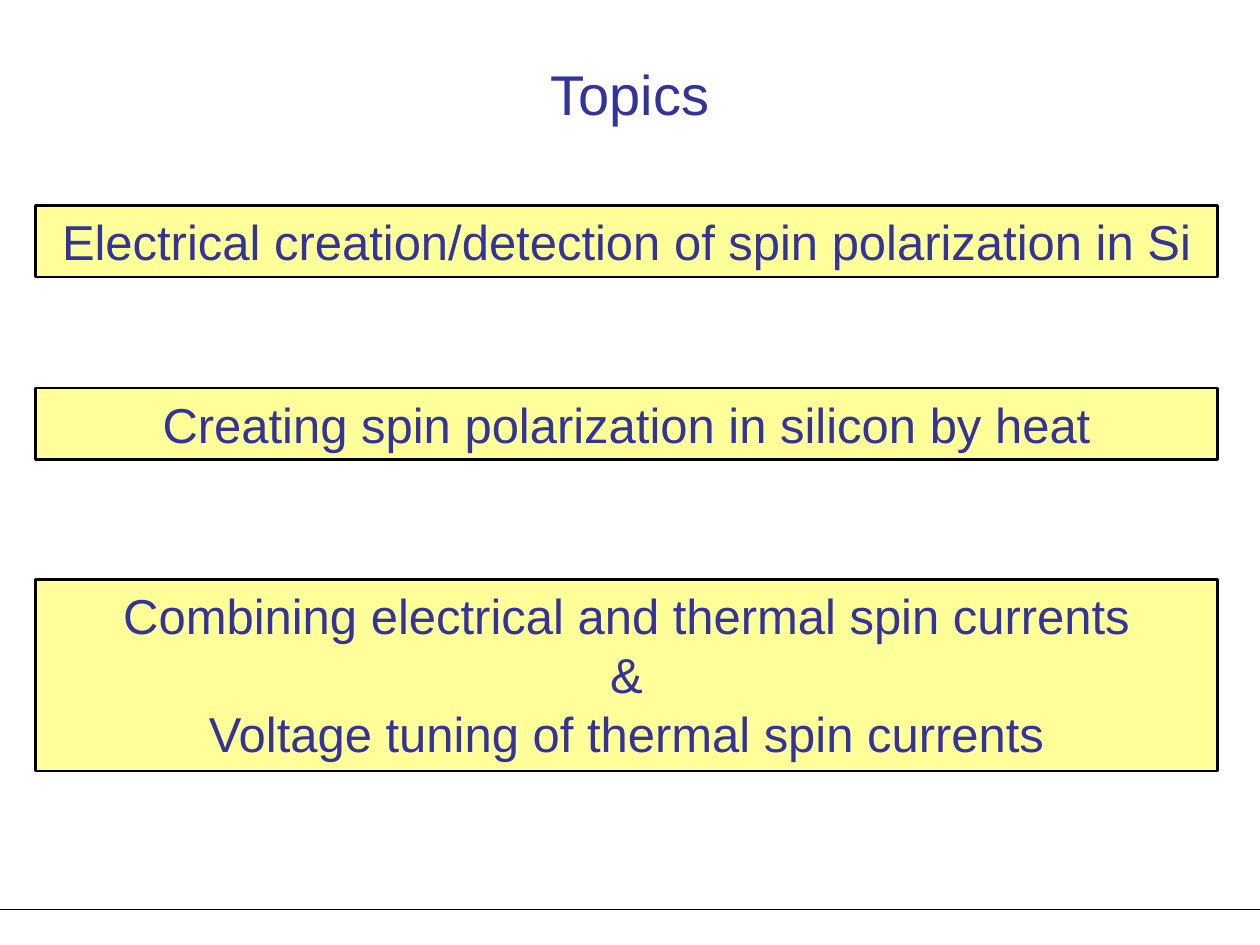
from dataclasses import dataclass

from lxml import etree
from pptx import Presentation
from pptx.dml.color import RGBColor
from pptx.enum import shapes, text
from pptx.oxml.ns import qn
from pptx.util import Pt


@dataclass(frozen=True)
class Theme:
    font: str = "Arial"
    ink: RGBColor = RGBColor(0x33, 0x33, 0x99)
    panel: RGBColor = RGBColor(0xFF, 0xFF, 0x99)
    line: RGBColor = RGBColor(0, 0, 0)
    title_size: int = 32
    topic_size: int = 28


WIDTH, HEIGHT = 720, 540
TOPIC_LEFT, TOPIC_WIDTH = 20.2, 675.4
TOPICS = [
    (117.4, 41, "Electrical creation/detection of spin polarization in Si"),
    (221.8, 41, "Creating spin polarization in silicon by heat"),
    (331.2, 109.4, "Combining electrical and thermal spin currents\n&\n"
                   "Voltage tuning of thermal spin currents"),
]


class SlideBuilder:
    def __init__(self, slide, theme):
        self.slide = slide
        self.theme = theme

    def set_text(self, sp, content, size, spacing=None):
        """Fill a shape with centred text, one paragraph per line."""
        tf = sp.text_frame
        tf.word_wrap = True
        tf.text = content
        for p in tf.paragraphs:
            p.alignment = text.PP_ALIGN.CENTER
            p.line_spacing = spacing
            for r in p.runs:
                r.font.name = self.theme.font
                r.font.size = Pt(size)
                r.font.color.rgb = self.theme.ink

    def title(self, content, top, height):
        sp = self.slide.shapes.add_textbox(0, Pt(top), Pt(WIDTH), Pt(height))
        self.set_text(sp, content, self.theme.title_size, spacing=1.2)

    def topic(self, content, top, height):
        sp = self.slide.shapes.add_shape(
            shapes.MSO_SHAPE.RECTANGLE,
            Pt(TOPIC_LEFT), Pt(top), Pt(TOPIC_WIDTH), Pt(height))
        sp.shadow.inherit = False
        sp.fill.solid()
        sp.fill.fore_color.rgb = self.theme.panel
        sp.line.color.rgb = self.theme.line
        sp.line.width = Pt(1.5)
        self.set_text(sp, content, self.theme.topic_size)
        sp.text_frame.vertical_anchor = text.MSO_ANCHOR.TOP

    def rule(self, y):
        """Draw a thin line across the whole slide."""
        line = self.slide.shapes.add_connector(
            shapes.MSO_CONNECTOR.STRAIGHT, 0, Pt(y), Pt(WIDTH), Pt(y))
        line.line.color.rgb = self.theme.line
        line.line.width = Pt(0.75)
        etree.SubElement(line._element.spPr, qn("a:effectLst"))


def main():
    prs = Presentation()
    prs.slide_width, prs.slide_height = Pt(WIDTH), Pt(HEIGHT)
    builder = SlideBuilder(prs.slides.add_slide(prs.slide_layouts[6]), Theme())
    builder.rule(519.6)
    builder.title("Topics", 23, 49.7)
    for top, height, content in TOPICS:
        builder.topic(content, top, height)
    prs.save("out.pptx")


if __name__ == "__main__":
    main()
